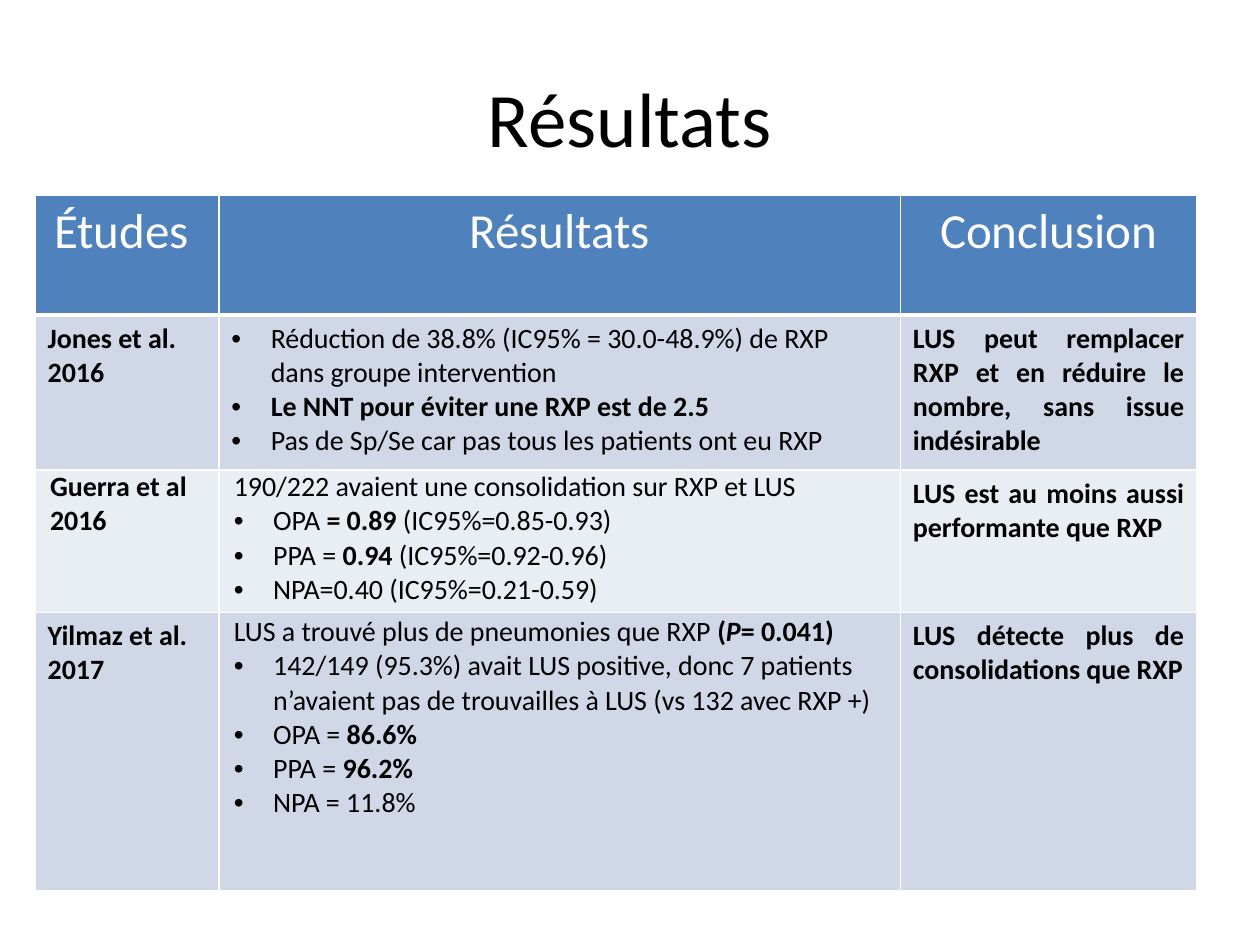
"""Build the results slide comparing three lung ultrasound studies."""
import lxml.etree
import pptx
import pptx.dml.color
import pptx.enum.text
import pptx.oxml.ns
import pptx.util

Pt = pptx.util.Pt
qn = pptx.oxml.ns.qn
ALIGN = pptx.enum.text.PP_ALIGN
ANCHOR = pptx.enum.text.MSO_ANCHOR

WIDTHS = [105, 389.5, 169.5]
HEIGHTS = [68.5, 88.5, 81.5, 159]
HEADINGS = ["Études ", "Résultats", "Conclusion"]
BANDS = ["D0D8E8", "E9EDF4", "D0D8E8"]
TIGHT = {"margin_left": Pt(8.6), "margin_right": Pt(8.6), "margin_top": 0, "margin_bottom": 0}


def color(code):
    """Turn a hex string into a colour."""
    return pptx.dml.color.RGBColor.from_string(code)


def apply(target, values):
    """Set each named attribute on the target."""
    for name, value in values.items():
        setattr(target, name, value)


def item(*spans):
    """Describe a bulleted paragraph."""
    return {"spans": spans, "bullet": True}


def line(*spans, **values):
    """Describe a plain paragraph with its format values."""
    return {"spans": spans, "values": values}


def bold(text, italic=False):
    """Describe a bold span."""
    return text, {"bold": True, "italic": italic}


STUDIES = [
    {
        "study": "Jones et al. 2016",
        "results": [
            item("Réduction de 38.8% (IC95% = 30.0-48.9%) de RXP dans groupe intervention"),
            item(bold("Le NNT pour éviter une RXP est de 2.5")),
            item("Pas de Sp/Se car pas tous les patients ont eu RXP"),
        ],
        "conclusion": "LUS peut remplacer RXP et en réduire le nombre, sans issue indésirable",
        "margins": [{}, {}, {}],
    },
    {
        "study": "Guerra et al 2016",
        "results": [
            line("190/222 avaient une consolidation sur RXP et LUS"),
            item("OPA ", bold("= 0.89"), " (IC95%=0.85-0.93)"),
            item("PPA = ", bold("0.94"), " (IC95%=0.92-0.96)"),
            item("NPA=0.40 (IC95%=0.21-0.59)"),
        ],
        "conclusion": "LUS est au moins aussi performante que RXP ",
        "margins": [TIGHT, TIGHT, {}],
    },
    {
        "study": "Yilmaz et al. 2017",
        "results": [
            line("LUS a trouvé plus de pneumonies que RXP ", bold("("), bold("P", True),
                 bold("= 0.041) "), alignment=ALIGN.JUSTIFY, line_spacing=1.07),
            item("142/149 (95.3%) avait LUS positive, donc 7 patients "
                 "n’avaient pas de trouvailles à LUS (vs 132 avec RXP +)"),
            item("OPA = ", bold("86.6%")),
            item("PPA = ", bold("96.2%")),
            item("NPA = 11.8%"),
        ],
        "conclusion": "LUS détecte plus de consolidations que RXP",
        "margins": [{}, TIGHT, {}],
    },
]


class Page:
    """Hold the style and the current slide."""

    font = "Calibri"
    ink = "000000"
    white = "FFFFFF"
    accent = "4F81BD"
    indent = Pt(22.5)

    def __init__(self, deck):
        """Add a blank slide to the deck."""
        self.slide = deck.slides.add_slide(deck.slide_layouts[6])

    def fill_text(self, frame, paragraphs, size, ink):
        """Fill a text frame with described paragraphs."""
        for index, content in enumerate(paragraphs):
            para = frame.add_paragraph() if index else frame.paragraphs[0]
            apply(para, content.get("values", {}))
            if content.get("bullet"):
                self.bullet(para)
            for part in content["spans"]:
                text, values = (part, {}) if isinstance(part, str) else part
                span = para.add_run()
                span.text = text
                span.font.color.rgb = color(ink)
                apply(span.font, {"name": self.font, "size": Pt(size), "bold": False, **values})

    def bullet(self, para):
        """Give a paragraph a round bullet and a hanging indent."""
        properties = para._p.get_or_add_pPr()
        properties.set("marL", str(self.indent))
        properties.set("indent", str(-self.indent))
        lxml.etree.SubElement(properties, qn("a:buFont"), typeface="Arial")
        lxml.etree.SubElement(properties, qn("a:buChar"), char="•")

    def title(self, text, left, top, width, height):
        """Add the centred slide title."""
        box = self.slide.shapes.add_textbox(Pt(left), Pt(top), Pt(width), Pt(height))
        apply(box.text_frame, {"word_wrap": True, "vertical_anchor": ANCHOR.MIDDLE})
        self.fill_text(box.text_frame, [line(text, alignment=ALIGN.CENTER)], 44, self.ink)

    def table(self, left, top, widths, heights):
        """Add an empty table with the given column widths and row heights."""
        frame = self.slide.shapes.add_table(
            len(heights), len(widths), Pt(left), Pt(top), Pt(sum(widths)), Pt(sum(heights)))
        for column, width in zip(frame.table.columns, widths):
            column.width = Pt(width)
        for row, height in zip(frame.table.rows, heights):
            row.height = Pt(height)
        return frame.table

    def cell(self, cell, paragraphs, fill, size=16, ink=ink, bottom=1, margins={}):
        """Fill, border and letter one table cell."""
        apply(cell, margins)
        edges = {"a:lnL": 1, "a:lnR": 1, "a:lnT": 1, "a:lnB": bottom}
        for tag, weight in edges.items():
            edge = lxml.etree.SubElement(cell._tc.get_or_add_tcPr(), qn(tag), w=str(Pt(weight)))
            solid = lxml.etree.SubElement(edge, qn("a:solidFill"))
            lxml.etree.SubElement(solid, qn("a:srgbClr"), val=self.white)
        cell.fill.solid()
        cell.fill.fore_color.rgb = color(fill)
        self.fill_text(cell.text_frame, paragraphs, size, ink)


def main():
    """Build and save the deck."""
    deck = pptx.Presentation()
    apply(deck, {"slide_width": Pt(720), "slide_height": Pt(540)})
    page = Page(deck)
    page.title("Résultats", 36, 21.6, 648, 90)
    table = page.table(20, 111.6, WIDTHS, HEIGHTS)
    for column, heading in enumerate(HEADINGS):
        page.cell(table.cell(0, column), [line(heading, alignment=ALIGN.CENTER)],
                  page.accent, size=28, ink=page.white, bottom=3)
    for row, (study, band) in enumerate(zip(STUDIES, BANDS), 1):
        contents = [
            [line(bold(study["study"]))],
            study["results"],
            [line(bold(study["conclusion"]), alignment=ALIGN.JUSTIFY)],
        ]
        for column, (paragraphs, margins) in enumerate(zip(contents, study["margins"])):
            page.cell(table.cell(row, column), paragraphs, band, margins=margins)
    deck.save("out.pptx")


if __name__ == "__main__":
    main()
